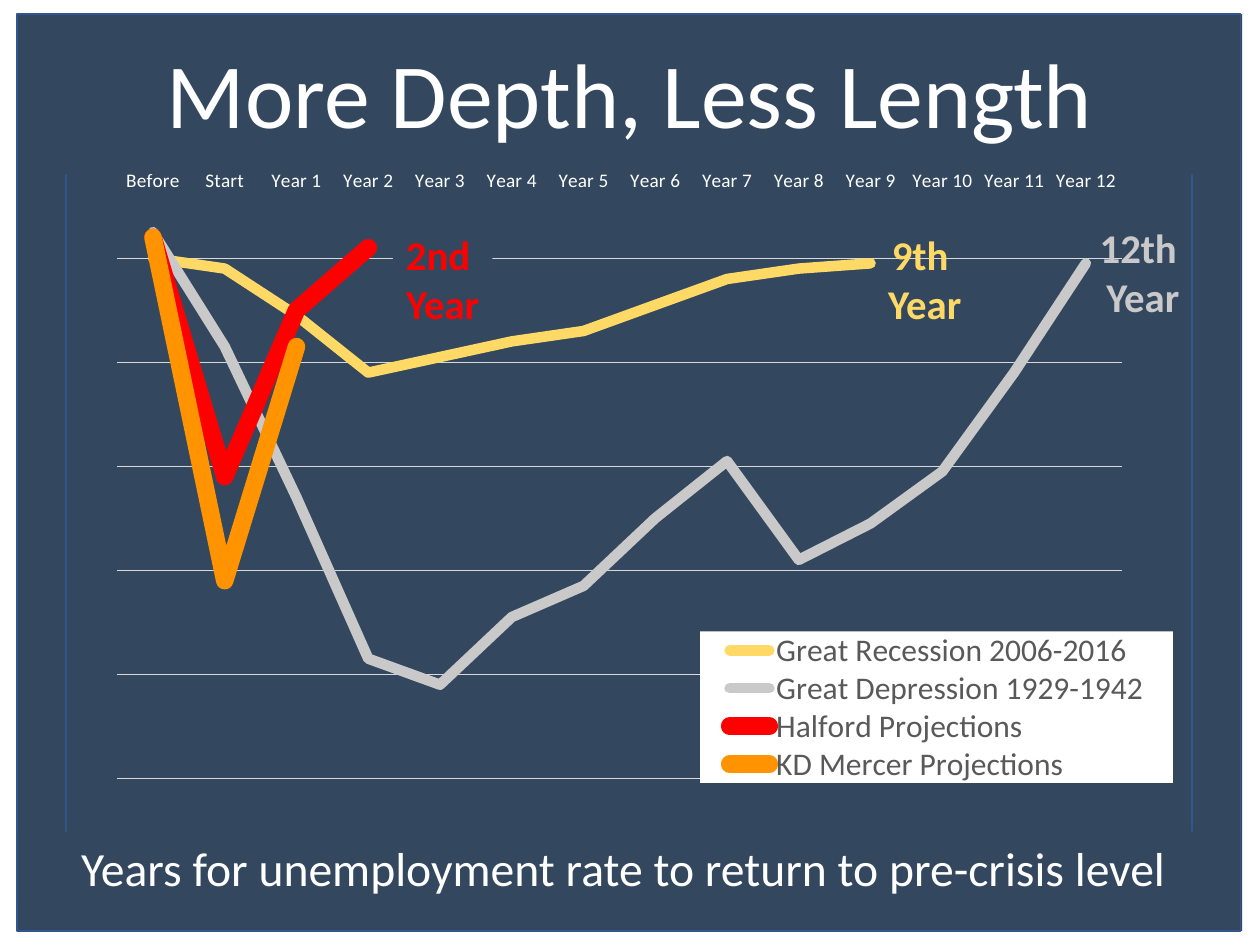
from dataclasses import dataclass

from lxml import etree
from pptx import Presentation
from pptx.chart.data import CategoryChartData
from pptx.dml.color import RGBColor
from pptx.enum.chart import XL_CHART_TYPE, XL_LEGEND_POSITION, XL_MARKER_STYLE, XL_TICK_MARK
from pptx.enum.shapes import MSO_SHAPE
from pptx.enum.text import MSO_ANCHOR, MSO_AUTO_SIZE, PP_ALIGN
from pptx.oxml import parse_xml
from pptx.oxml.ns import nsdecls, qn
from pptx.util import Cm, Pt

RECT, FRAME = MSO_SHAPE.RECTANGLE, MSO_SHAPE.FRAME
CENTER, MIDDLE = PP_ALIGN.CENTER, MSO_ANCHOR.MIDDLE
NO_FIT, NO_TICK, NO_MARKER = MSO_AUTO_SIZE.NONE, XL_TICK_MARK.NONE, XL_MARKER_STYLE.NONE
LINE_CHART, BOTTOM = XL_CHART_TYPE.LINE, XL_LEGEND_POSITION.BOTTOM
FONT = "Calibri"
NAVY, WHITE = "33485F", "FFFFFF"
YELLOW, SILVER, RED, ORANGE = "FFD966", "C9C9C9", "FF0000", "FF9300"


@dataclass
class Box:
    """Left, top, width and height in centimetres."""
    x: float
    y: float
    w: float
    h: float

    def emu(self) -> tuple:
        return Cm(self.x), Cm(self.y), Cm(self.w), Cm(self.h)


@dataclass
class Episode:
    name: str
    color: str
    width: float
    values: list


@dataclass
class EndLabel:
    lines: tuple
    color: str
    box: Box
    fill: str = ""


EPISODES = [
    Episode("Great Recession 2006-2016", YELLOW, 6,
            [-18, -20, -29, -40, -37, -34, -32, -27, -22, -20, -19]),
    Episode("Great Depression 1929-1942", SILVER, 6,
            [-13, -35, -64, -95, -100, -87, -81, -68, -57, -76, -69, -59, -40, -19]),
    Episode("Halford Projections", RED, 10, [-14, -60, -28, -16]),
    Episode("KD Mercer Projections", ORANGE, 10, [-14, -80, -35]),
]
LABELS = [
    EndLabel(("2nd ", "Year"), RED, Box(7.92, 4.48, 2.01, 2.26), "33475F"),
    EndLabel(("9th", " Year"), YELLOW, Box(17.46, 4.48, 2.18, 2.26)),
    EndLabel(("12th ", "Year"), SILVER, Box(21.91, 4.35, 2.26, 2.26)),
]
CATEGORIES = ["Before", "Start"] + [f"Year {n}" for n in range(1, 13)]


def rgb(color: str) -> RGBColor:
    return RGBColor.from_string(color)


def set_font(font, size: float, color: str, bold: bool = False) -> None:
    font.name, font.size, font.bold = FONT, Pt(size), bold
    font.color.rgb = rgb(color)


def set_fill(sp, color: str) -> None:
    sp.fill.solid()
    sp.fill.fore_color.rgb = rgb(color)


def write(sp, lines: tuple, size: float, color: str, bold: bool = False, wrap: bool = True) -> None:
    tf = sp.text_frame
    tf.word_wrap, tf.auto_size, tf.vertical_anchor = wrap, NO_FIT, MIDDLE
    for i, line in enumerate(lines):
        p = tf.add_paragraph() if i else tf.paragraphs[0]
        p.alignment = CENTER
        r = p.add_run()
        r.text = line
        set_font(r.font, size, color, bold)


def add_panel(s, box: Box, kind=RECT, color: str = NAVY):
    sp = s.shapes.add_shape(kind, *box.emu())
    sp.shadow.inherit = False
    set_fill(sp, color)
    sp.line.fill.background()
    return sp


def add_label(s, label: EndLabel) -> None:
    if label.fill:
        sp = add_panel(s, label.box, color=label.fill)
    else:
        sp = s.shapes.add_textbox(*label.box.emu())
    write(sp, label.lines, 23.3, label.color, bold=True, wrap=False)


def set_layout(parent, index: int, percents: tuple, inner: bool = False) -> None:
    """Place a chart part by percentages of the chart area."""
    for old in parent.findall(qn("c:layout")):
        parent.remove(old)
    target = '<c:layoutTarget val="inner"/>' if inner else ""
    modes = '<c:xMode val="edge"/><c:yMode val="edge"/>'
    sizes = "".join(f'<c:{k} val="{v / 100:.3f}"/>' for k, v in zip("xywh", percents))
    parent.insert(index, parse_xml(
        f'<c:layout {nsdecls("c")}><c:manualLayout>{target}{modes}{sizes}'
        '</c:manualLayout></c:layout>'))


def style_series(chart) -> None:
    for series, e in zip(chart.plots[0].series, EPISODES):
        series.smooth = False
        series.marker.style = NO_MARKER
        line = series.format.line
        line.color.rgb, line.width = rgb(e.color), Pt(e.width)
    for ln in chart.element.findall(".//" + "/".join(map(qn, ("c:ser", "c:spPr", "a:ln")))):
        ln.set("cap", "rnd")
        etree.SubElement(ln, qn("a:round"))


def style_axes(chart) -> None:
    cat, val = chart.category_axis, chart.value_axis
    cat.major_tick_mark = cat.minor_tick_mark = NO_TICK
    set_font(cat.tick_labels.font, 11, WHITE)
    cat.format.line.color.rgb = rgb("000000")
    cat.format.line.width = Pt(3)
    val.minimum_scale, val.maximum_scale, val.major_unit = -118, 2, 20
    val.has_major_gridlines = True
    grid = val.major_gridlines.format.line
    grid.color.rgb, grid.width = rgb("D9D9D9"), Pt(0.75)
    val.visible = False


def style_legend(chart) -> None:
    chart.has_legend = True
    legend = chart.legend
    legend.position = BOTTOM
    legend.include_in_layout = False
    set_font(legend.font, 18, "595959")
    element = chart.element.find(".//" + qn("c:legend"))
    set_layout(element, 1, (57.4, 72.9, 42.5, 21.8))
    element.find(qn("c:txPr")).addprevious(parse_xml(
        f'<c:spPr {nsdecls("c", "a")}><a:solidFill><a:srgbClr val="{WHITE}"/>'
        '</a:solidFill></c:spPr>'))


def add_unemployment_chart(s, box: Box) -> None:
    data = CategoryChartData()
    data.categories = CATEGORIES
    for e in EPISODES:
        gaps = [None] * (len(CATEGORIES) - len(e.values))
        data.add_series(e.name, e.values + gaps)
    chart = s.shapes.add_chart(LINE_CHART, *box.emu(), data).chart
    chart.has_title = False
    set_font(chart.font, 10, "000000")
    chart.plots[0].vary_by_categories = False
    style_series(chart)
    style_axes(chart)
    style_legend(chart)
    plot_area = chart.element.find(".//" + qn("c:plotArea"))
    set_layout(plot_area, 0, (5, 4.2, 90.3, 89.9), inner=True)


def main() -> None:
    prs = Presentation()
    prs.slide_width, prs.slide_height = Cm(25.4), Cm(19.05)
    s = prs.slides.add_slide(prs.slide_layouts[5])

    add_panel(s, Box(0.38, 0.28, 24.66, 18.49))
    add_unemployment_chart(s, Box(1.24, 2.52, 22.43, 14))
    for label in LABELS:
        add_label(s, label)

    frame = add_panel(s, Box(0.35, 0.28, 24.66, 18.49), FRAME)
    frame.adjustments[0] = 0.053
    frame.line.color.rgb, frame.line.width = rgb("325491"), Pt(1)
    add_panel(s, Box(1.24, 1.27, 22.94, 2.24))

    title = s.shapes.title
    title.left, title.top, title.width, title.height = Box(0.41, 0.61, 24.59, 2.49).emu()
    set_fill(title, NAVY)
    write(title, ("More Depth, Less Length",), 52.4, WHITE)
    title.element.getparent().append(title.element)  # bring in front of the frame

    caption = add_panel(s, Box(0.36, 16.77, 24.64, 1.42))
    write(caption, ("Years for unemployment rate to return to pre-crisis level ",), 27.2, WHITE)
    prs.save("out.pptx")


if __name__ == "__main__":
    main()
